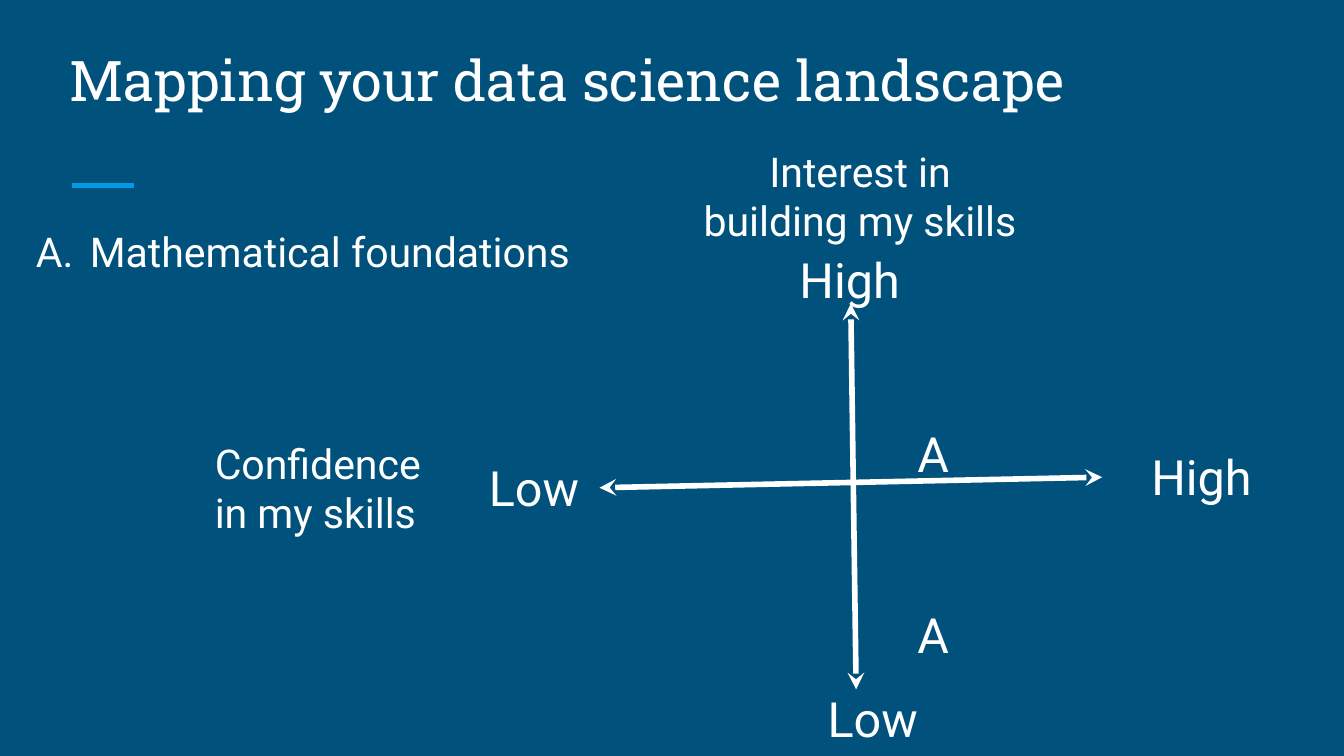
from lxml import etree
from pptx import Presentation
from pptx import util as u
from pptx.dml.color import RGBColor
from pptx.enum import shapes, text
from pptx.oxml.ns import qn

NAVY = RGBColor(0x00, 0x51, 0x7C)
SKY = RGBColor(0x03, 0x9B, 0xE5)
WHITE = RGBColor(0xFF, 0xFF, 0xFF)
LABEL_SIZE, AXIS_SIZE = 22, 26


def add_label(slide, box, words, size, font="Roboto", anchor=text.MSO_ANCHOR.TOP, **paragraph_format):
    """Add a one-paragraph text box at box (left, top, width, height in cm)."""
    frame = slide.shapes.add_textbox(*map(u.Cm, box)).text_frame
    margins = {f"margin_{side}": u.Cm(0.25) for side in ("left", "top", "right", "bottom")}
    frame_format = {"word_wrap": True, "vertical_anchor": anchor, **margins}
    for name, value in frame_format.items():
        setattr(frame, name, value)
    paragraph = frame.paragraphs[0]
    for name, value in paragraph_format.items():
        setattr(paragraph, name, value)
    run = paragraph.add_run()
    run.text = words
    for name, value in {"size": u.Pt(size), "name": font}.items():
        setattr(run.font, name, value)
    run.font.color.rgb = WHITE
    return paragraph


def add_line(slide, start, end, color, arrows=False):
    line = slide.shapes.add_connector(
        shapes.MSO_CONNECTOR.STRAIGHT, *map(u.Cm, (*start, *end)))
    line.line.width = u.Pt(3)
    line.line.color.rgb = color
    if arrows:
        for tag in ("a:headEnd", "a:tailEnd"):
            etree.SubElement(line.line._get_or_add_ln(), qn(tag), type="stealth")
    etree.SubElement(line._element.spPr, qn("a:effectLst"))


def add_header(slide, box):
    left, top, width, height = box
    rule_left, rule_top = left + 0.3, top + 3.03
    add_line(slide, (rule_left, rule_top), (rule_left + 1.17, rule_top), SKY)
    add_label(slide, box, "Mapping your data science landscape", 30,
              font="Roboto Slab", anchor=text.MSO_ANCHOR.BOTTOM)


def add_topic(slide, box):
    """Add the lettered topic with a hanging indent."""
    paragraph = add_label(slide, box, "Mathematical foundations", LABEL_SIZE, line_spacing=1.15)
    properties = paragraph._p.get_or_add_pPr()
    for name, length in {"marL": 1.27, "indent": -1.02}.items():
        properties.set(name, str(u.Cm(length)))
    bullet_color = etree.SubElement(properties, qn("a:buClr"))
    etree.SubElement(bullet_color, qn("a:srgbClr"), val=str(WHITE))
    etree.SubElement(properties, qn("a:buFont"), typeface="Roboto")
    etree.SubElement(properties, qn("a:buAutoNum"), type="alphaUcPeriod")


def add_skill_map(slide, box):
    """Draw the two axes with their titles, end labels and topic markers."""
    left, top, width, height = box

    def place(x, y):
        return left + x, top + y

    add_line(slide, place(17.02, 6.51), place(7.52, 6.71), WHITE, arrows=True)
    add_line(slide, place(12.27, 3.23), place(12.37, 10.52), WHITE, arrows=True)

    add_label(slide, (*place(0, 5.52), 4.75, 2.18), "Confidence in my skills", LABEL_SIZE)
    add_label(slide, (*place(9.12, 0), 6.65, 2.18), "Interest in building my skills",
              LABEL_SIZE, alignment=text.PP_ALIGN.CENTER)

    label_sizes = {"High": (2.79, 1.83), "Low": (2.26, 1.83), "A": (1.52, 1.22)}
    labels = [
        ("High", 17.7, 5.69), ("Low", 5.18, 5.9),
        ("High", 11.05, 1.96), ("Low", 11.58, 10.27),
        ("A", 13.28, 5.26), ("A", 13.28, 8.67),
    ]
    for words, x, y in labels:
        add_label(slide, (*place(x, y), *label_sizes[words]), words, AXIS_SIZE)


def main():
    presentation = Presentation()
    presentation.slide_width, presentation.slide_height = u.Cm(25.4), u.Cm(14.29)
    slide = presentation.slides.add_slide(presentation.slide_layouts[6])
    slide.background.fill.solid()
    slide.background.fill.fore_color.rgb = NAVY
    add_header(slide, (1.07, 0.48, 23.24, 1.9))
    add_topic(slide, (0.18, 3.89, 19.18, 2.24))
    add_skill_map(slide, (3.81, 2.51, 20.5, 12.1))
    presentation.save("out.pptx")


if __name__ == "__main__":
    main()
